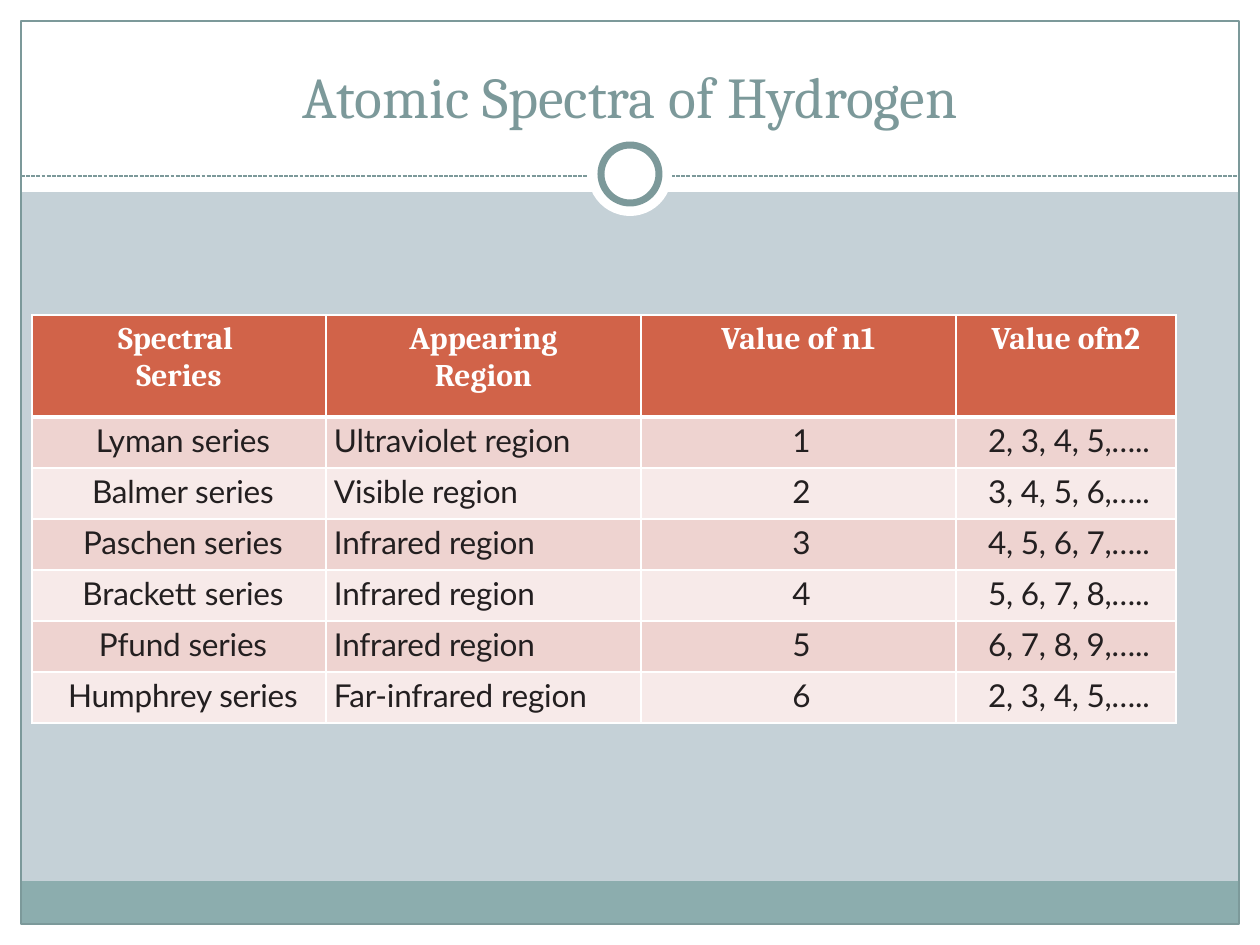
from dataclasses import dataclass
from typing import Optional

from lxml import etree
from pptx import Presentation
from pptx import util as u
from pptx.dml.color import RGBColor
from pptx.enum import dml, shapes, text
from pptx.oxml import ns

RECT = shapes.MSO_SHAPE.RECTANGLE
OVAL = shapes.MSO_SHAPE.OVAL
CENTER = text.PP_ALIGN.CENTER
LEFT = text.PP_ALIGN.LEFT


@dataclass(frozen=True)
class Theme:
    background: str = "C5D1D7"
    paper: str = "FFFFFF"
    accent: str = "7C999A"
    footer: str = "8CADAE"
    header: str = "D16349"
    bands: tuple[str, str] = ("EED3D0", "F7EAE9")
    ink: str = "231F20"
    heading_font: str = "Cambria"
    body_font: str = "Lato"
    title_size: int = 33
    table_size: int = 18
    thin: float = 0.75
    ring: float = 4
    border: float = 1
    header_border: float = 3


@dataclass(frozen=True)
class Panel:
    kind: shapes.MSO_SHAPE
    left: int
    top: int
    width: int
    height: int
    fill: Optional[str] = None
    line_width: float = 0


@dataclass(frozen=True)
class Series:
    name: str
    region: str
    n1: str
    n2: str
    space_before: float = 2.3


THEME = Theme()
WIDTH, HEIGHT = 1260, 945
MARGIN = 21
INNER_W, INNER_H = WIDTH - 2 * MARGIN, HEIGHT - 2 * MARGIN
RULE_Y = 176

PANELS = [
    Panel(RECT, 0, HEIGHT - MARGIN, WIDTH, MARGIN, THEME.paper),
    Panel(RECT, 0, 0, WIDTH, 192, THEME.paper),
    Panel(RECT, 0, 0, MARGIN, HEIGHT, THEME.paper),
    Panel(RECT, WIDTH - MARGIN, 0, MARGIN, HEIGHT, THEME.paper),
    Panel(RECT, MARGIN, 881, INNER_W, 43, THEME.footer),
    Panel(RECT, MARGIN, MARGIN, INNER_W, INNER_H, None, THEME.thin),
]
RING = [
    Panel(OVAL, 588, 132, 84, 84, THEME.paper),
    Panel(OVAL, 601, 145, 58, 58, THEME.paper, THEME.ring),
]

COLUMNS = [294, 315, 315, 220]
INDENTS = [8, 8, 6, 6]
ALIGNS = [CENTER, LEFT, CENTER, CENTER]
HEADER_H, ROW_H = 102, 51
HEADINGS = [["Spectral ", "Series"], ["Appearing", "Region"], ["Value of n1"], ["Value ofn2"]]
SERIES = [
    Series("Lyman series", "Ultraviolet region", "1", "2, 3, 4, 5,…..", 1.9),
    Series("Balmer series", "Visible region", "2", "3, 4, 5, 6,…..",),
    Series("Paschen series", "Infrared region", "3", "4, 5, 6, 7,….."),
    Series("Brackett series", "Infrared region", "4", "5, 6, 7, 8,….."),
    Series("Pfund series", "Infrared region", "5", "6, 7, 8, 9,….."),
    Series("Humphrey series", "Far-infrared region", "6", "2, 3, 4, 5,….."),
]


def px(n: int) -> u.Emu:
    return u.Emu(round(n * 914400 / 126))


def rgb(value: str) -> RGBColor:
    return RGBColor.from_string(value)


def add_run(p, words: str, font: str, size: int, color: str, bold: bool = False):
    r = p.add_run()
    r.text = words
    r.font.name = font
    r.font.size = u.Pt(size)
    r.font.bold = bold
    r.font.color.rgb = rgb(color)
    return r


def draw_panel(s, panel: Panel) -> None:
    sp = s.shapes.add_shape(
        panel.kind, px(panel.left), px(panel.top), px(panel.width), px(panel.height)
    )
    sp.shadow.inherit = False
    if panel.fill:
        sp.fill.solid()
        sp.fill.fore_color.rgb = rgb(panel.fill)
    else:
        sp.fill.background()
    if panel.line_width:
        sp.line.color.rgb = rgb(THEME.accent)
        sp.line.width = u.Pt(panel.line_width)
    else:
        sp.line.fill.background()


def draw_rule(s) -> None:
    sp = s.shapes.add_connector(
        shapes.MSO_CONNECTOR.STRAIGHT, px(MARGIN), px(RULE_Y), px(WIDTH - MARGIN), px(RULE_Y)
    )
    sp.line.color.rgb = rgb(THEME.accent)
    sp.line.width = u.Pt(THEME.thin)
    sp.line.dash_style = dml.MSO_LINE.SQUARE_DOT
    etree.SubElement(sp._element.spPr, ns.qn("a:effectLst"))


def draw_title(s, words: str) -> None:
    tf = s.shapes.add_textbox(px(42), px(31), px(1176), px(105)).text_frame
    tf.word_wrap = True
    tf.vertical_anchor = text.MSO_ANCHOR.BOTTOM
    p = tf.paragraphs[0]
    p.alignment = CENTER
    add_run(p, words, THEME.heading_font, THEME.title_size, THEME.accent)


def style_cell(cell, fill: str, top: float, bottom: float) -> None:
    props = cell._tc.get_or_add_tcPr()
    edges = {"lnL": THEME.border, "lnR": THEME.border, "lnT": top, "lnB": bottom}
    for tag, width in edges.items():
        ln = etree.SubElement(props, ns.qn(f"a:{tag}"), w=str(u.Pt(width)))
        solid = etree.SubElement(ln, ns.qn("a:solidFill"))
        etree.SubElement(solid, ns.qn("a:srgbClr"), val=THEME.paper)
    cell.fill.solid()
    cell.fill.fore_color.rgb = rgb(fill)


def fill_heading(cell, lines: list[str]) -> None:
    style_cell(cell, THEME.header, THEME.border, THEME.header_border)
    tf = cell.text_frame
    for i, line in enumerate(lines):
        p = tf.add_paragraph() if i else tf.paragraphs[0]
        p.alignment = CENTER
        add_run(p, line, THEME.heading_font, THEME.table_size, THEME.paper, True)


def fill_value(cell, words: str, column: int, row: int, space_before: float) -> None:
    top = THEME.header_border if row == 0 else THEME.border
    style_cell(cell, THEME.bands[row % 2], top, THEME.border)
    cell.margin_left = cell.margin_right = cell.margin_bottom = 0
    cell.margin_top = px(4)
    p = cell.text_frame.paragraphs[0]
    p.alignment = ALIGNS[column]
    p.space_before = u.Pt(space_before)
    p._p.get_or_add_pPr().set("marL", str(px(INDENTS[column])))
    r = add_run(p, words, THEME.body_font, THEME.table_size, THEME.ink)
    if column != 2:
        r.font._element.set("spc", "-10")


def draw_table(s) -> None:
    heights = [HEADER_H] + [ROW_H] * len(SERIES)
    table = s.shapes.add_table(
        len(heights), len(COLUMNS), px(32), px(315), px(sum(COLUMNS)), px(sum(heights))
    ).table
    for column, width in zip(table.columns, COLUMNS):
        column.width = px(width)
    for row, height in zip(table.rows, heights):
        row.height = px(height)
    for c, lines in enumerate(HEADINGS):
        fill_heading(table.cell(0, c), lines)
    for i, item in enumerate(SERIES):
        for c, words in enumerate((item.name, item.region, item.n1, item.n2)):
            fill_value(table.cell(i + 1, c), words, c, i, item.space_before)


def main() -> None:
    prs = Presentation()
    prs.slide_width, prs.slide_height = px(WIDTH), px(HEIGHT)
    s = prs.slides.add_slide(prs.slide_layouts[6])
    s.background.fill.solid()
    s.background.fill.fore_color.rgb = rgb(THEME.background)
    for panel in PANELS:
        draw_panel(s, panel)
    draw_rule(s)
    for panel in RING:
        draw_panel(s, panel)
    draw_title(s, "Atomic Spectra of Hydrogen")
    draw_table(s)
    prs.save("out.pptx")


if __name__ == "__main__":
    main()
